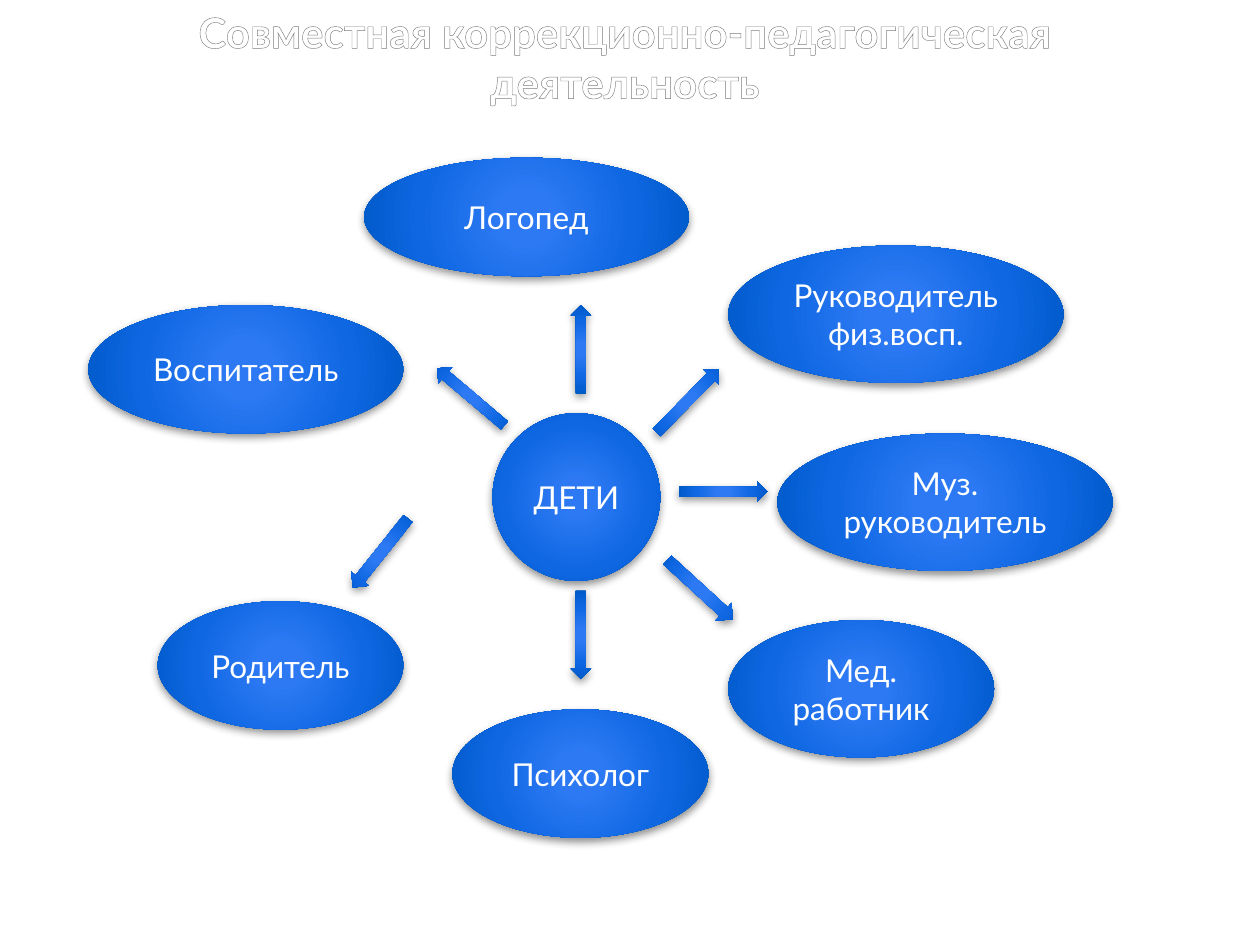
import pptx
import pptx.util
import pptx.dml.color
import pptx.enum.shapes
import pptx.enum.text
import pptx.oxml
import pptx.oxml.ns

Cm = pptx.util.Cm
SHAPE = pptx.enum.shapes.MSO_SHAPE
ANCHOR = pptx.enum.text.MSO_ANCHOR
NS = pptx.oxml.ns.nsdecls("a")


def rgb(value):
    return pptx.dml.color.RGBColor.from_string(value)


def gradient(stops, direction):
    """Return a gradient fill element from (percent, colour) stops."""
    items = "".join(
        f'<a:gs pos="{pos * 1000}"><a:srgbClr val="{color}"/></a:gs>'
        for pos, color in stops)
    return pptx.oxml.parse_xml(
        f'<a:gradFill {NS} rotWithShape="1"><a:gsLst>{items}</a:gsLst>'
        f'{direction}</a:gradFill>')


def write(tf, text, size=18, font="Lato", color="FFFFFF", bold=False,
          anchor=ANCHOR.MIDDLE):
    """Fill a text frame with centred paragraphs, one per line of text."""
    tf.word_wrap = True
    tf.auto_size = pptx.enum.text.MSO_AUTO_SIZE.NONE
    tf.vertical_anchor = anchor
    for i, line in enumerate(text.split("\n")):
        p = tf.add_paragraph() if i else tf.paragraphs[0]
        p.alignment = pptx.enum.text.PP_ALIGN.CENTER
        r = p.add_run()
        r.text = line
        r.font.size = pptx.util.Pt(size)
        r.font.name = font
        r.font.bold = bold
        if color:
            r.font.color.rgb = rgb(color)


class Diagram:
    BLUE = [(0, "2C79F5"), (15, "2C79F3"), (62, "0F67E2"),
            (97, "005BCA"), (100, "005BAD")]
    RADIAL = ('<a:path path="circle"><a:fillToRect l="50000" t="50000" '
              'r="50000" b="50000"/></a:path>')
    SILVER = [(0, "FFFFFF"), (9, "FFFFFF"), (50, "7F7F7F"),
              (79, "FFFFFF"), (100, "FFFFFF")]
    VERTICAL = '<a:lin ang="5400000" scaled="0"/>'
    OUTLINE = (f'<a:ln {NS} w="10500"><a:solidFill><a:srgbClr val="7D7D7D"/>'
               '</a:solidFill></a:ln>')
    SHADOW = (f'<a:outerShdw {NS} blurRad="63500" dist="25400" dir="5400000" '
              'rotWithShape="0"><a:srgbClr val="000000"><a:alpha val="43000"/>'
              '</a:srgbClr></a:outerShdw>')

    def __init__(self, slide):
        self.s = slide

    def title(self, text, x, y, w, h):
        sp = self.s.shapes.title
        sp.left, sp.top, sp.width, sp.height = Cm(x), Cm(y), Cm(w), Cm(h)
        write(sp.text_frame, text, size=24, color=None, bold=True,
              anchor=ANCHOR.TOP)
        rPr = sp.text_frame.paragraphs[0].runs[0].font._element
        rPr.insert(0, pptx.oxml.parse_xml(self.OUTLINE))
        rPr.insert(1, gradient(self.SILVER, self.VERTICAL))

    def shape(self, kind, x, y, w, h):
        sp = self.s.shapes.add_shape(kind, Cm(x), Cm(y), Cm(w), Cm(h))
        sp.line.fill.background()
        sp.shadow.inherit = False
        spPr = sp._element.spPr
        spPr.find(pptx.oxml.ns.qn("a:ln")).addprevious(
            gradient(self.BLUE, self.RADIAL))
        spPr.find(pptx.oxml.ns.qn("a:effectLst")).append(
            pptx.oxml.parse_xml(self.SHADOW))
        return sp

    def oval(self, text, x, y, w, h):
        write(self.shape(SHAPE.OVAL, x, y, w, h).text_frame, text)

    def arrow(self, cx, cy, w, angle, length=1.78):
        sp = self.shape(SHAPE.DOWN_ARROW, cx - w / 2, cy - length / 2,
                        w, length)
        sp.rotation = angle


def main():
    prs = pptx.Presentation()
    prs.slide_width, prs.slide_height = Cm(25.4), Cm(19.05)
    d = Diagram(prs.slides.add_slide(prs.slide_layouts[5]))

    d.title("Совместная коррекционно-педагогическая деятельность",
            2.18, 0, 20.83, 5.38)

    # Centre and the people around it: text, left, top, width, height
    for oval in [
        ("ДЕТИ", 9.93, 8.33, 3.38, 3.38),
        ("Воспитатель", 1.78, 6.15, 6.35, 2.59),
        ("Психолог", 9.12, 14.3, 5.16, 2.59),
        ("Мед.\nработник", 14.68, 12.5, 5.36, 2.77),
        ("Муз.\nруководитель", 15.67, 8.74, 6.76, 2.77),
        ("Руководитель физ.восп.", 14.68, 4.95, 6.76, 2.77),
        ("Логопед", 7.34, 3.18, 6.55, 2.39),
        ("Родитель", 3.18, 12.12, 4.95, 2.59),
    ]:
        d.oval(*oval)

    # Arrows pointing outwards: centre x, centre y, width, rotation
    for arrow in [
        (11.71, 12.8, 0.41, 0),
        (14.11, 11.89, 0.48, 312.5),
        (14.58, 9.91, 0.41, 270),
        (9.49, 8, 0.43, 130.3),
        (13.86, 8.08, 0.43, 224.4),
        (11.71, 7.04, 0.41, 180),
        (7.67, 11.15, 0.46, 38.6),
    ]:
        d.arrow(*arrow)

    prs.save("out.pptx")


if __name__ == "__main__":
    main()
